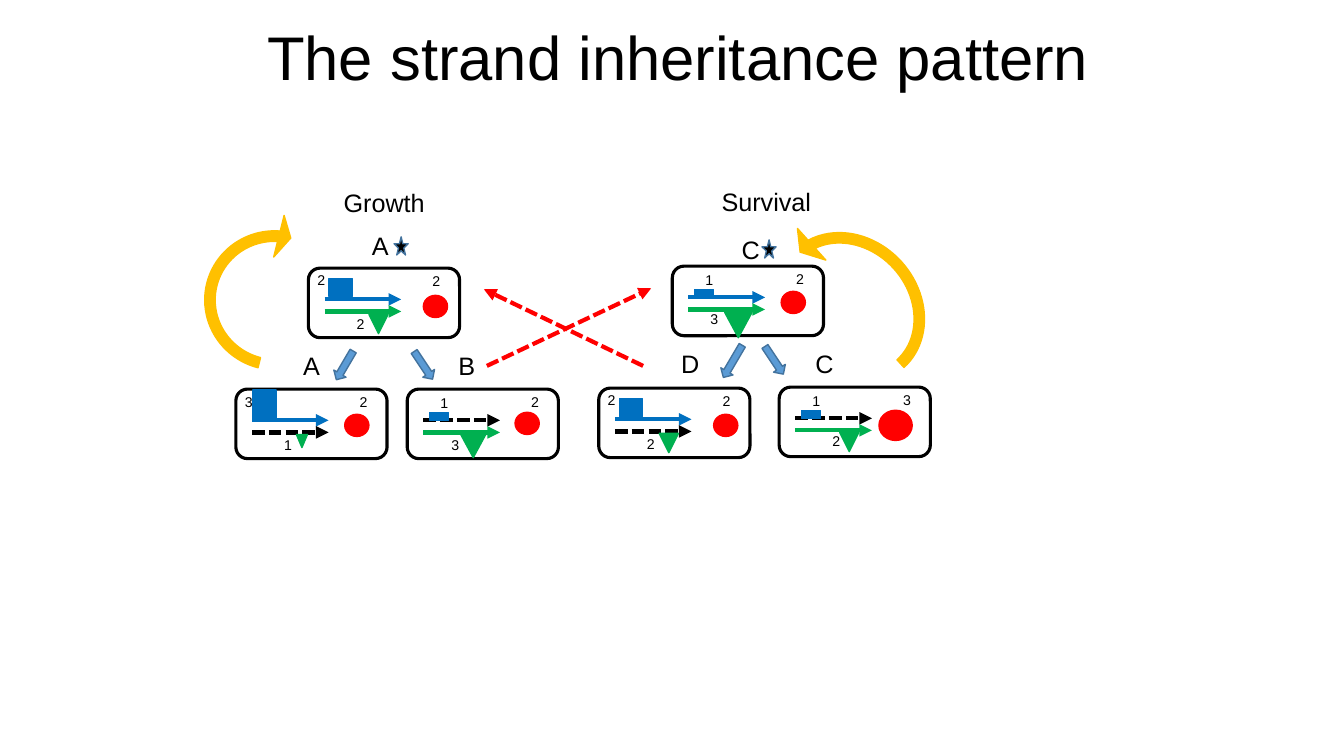
from dataclasses import dataclass

from lxml import etree
from pptx import Presentation, util as u
from pptx.dml import color
from pptx.enum import dml, shapes, text
from pptx.oxml import ns
from pptx.shapes import autoshape, connector
from pptx.slide import Slide

GRID = u.Inches(0.1)
COLUMNS, ROWS = 133.33, 75
MSO = shapes.MSO_SHAPE


@dataclass(frozen=True)
class Theme:
    font: str = "Arial"
    title: float = 44
    label: float = 18
    count: float = 10.1
    black: str = "000000"
    blue: str = "0070C0"
    green: str = "00B050"
    red: str = "FF0000"
    gold: str = "FFC000"
    arrow: str = "5B9BD5"
    edge: str = "43739E"
    strand: float = 3
    frame: float = 2.25
    thin: float = 1


@dataclass(frozen=True)
class Cell:
    """A cell with a level from 1 to 3 for each of its three traits."""
    col: float
    row: float
    blue: int
    green: int
    red: int
    dashed: str
    green_label: tuple[float, float]
    green_row: float
    dot: tuple[float, float]


@dataclass(frozen=True)
class Label:
    words: str
    col: float
    row: float
    width: float = 3.8


@dataclass(frozen=True)
class Mark:
    kind: MSO
    col: float
    row: float
    width: float
    height: float
    fill: str
    line: str
    turn: float = 0
    flips: tuple[str, ...] = ()
    adjust: tuple[float, ...] = ()


T = Theme()

# Offset from the cell's corner and size, by level
BARS = {1: (2.2, 2.3, 1.9, 0.8), 2: (2.05, 1.05, 2.3, 1.8), 3: (1.7, 0.1, 2.3, 3)}
BAR_LABELS = {1: (2.3, 0), 2: (-0.1, -0.2), 3: (-0.1, -0.1)}
WEDGES = {1: (6, 1.1, 1.3), 2: (6, 1.9, 1.9), 3: (5.2, 2.7, 2.5)}
DOTS = {2: (2.4, 2.2), 3: (3.3, 3)}

CELLS = [
    Cell(30.6, 26.6, 2, 2, 2, "", (3.8, 4.2), 4.6, (11.4, 2.7)),
    Cell(66.7, 26.4, 1, 3, 2, "", (2.8, 3.9), 4.6, (10.8, 2.5)),
    Cell(23.4, 38.6, 3, 1, 2, "green", (3.8, 4.2), 4.5, (10.8, 2.5)),
    Cell(40.4, 38.6, 1, 3, 2, "blue", (3.4, 4.2), 4.3, (10.7, 2.3)),
    Cell(59.4, 38.5, 2, 2, 2, "green", (3.8, 4.2), 4.5, (11.4, 2.6)),
    Cell(77.3, 38.4, 1, 2, 3, "blue", (4.3, 4), 4.5, (9.9, 2.3)),
]
LABELS = [
    Label("Growth", 33.1, 18.1, 10.2), Label("Survival", 70.6, 18, 11),
    Label("A", 35.9, 22.4), Label("C", 72.6, 22.8),
    Label("A", 29.1, 34.3), Label("B", 44.5, 34.3),
    Label("D", 66.6, 34.1), Label("C", 79.9, 34.1),
]
CURVE = (0.061, 6.413, 209.442, 108, 0.125)
MARKS = [
    Mark(MSO.CIRCULAR_ARROW, 18.8, 21.2, 17, 17.2, T.gold, T.gold, 104.3, ("flipH", "flipV"), CURVE),
    Mark(MSO.CIRCULAR_ARROW, 74.8, 22.1, 19.1, 16.9, T.gold, T.gold, 47.9, ("flipH",), CURVE),
    Mark(MSO.DOWN_ARROW, 33.5, 34.6, 1.4, 3.3, T.arrow, T.edge, 30.4),
    Mark(MSO.DOWN_ARROW, 41.3, 34.6, 1.4, 3.3, T.arrow, T.edge, 326.3),
    Mark(MSO.DOWN_ARROW, 72, 34, 1.4, 3.7, T.arrow, T.edge, 30.4),
    Mark(MSO.DOWN_ARROW, 76.1, 34.1, 1.4, 3.3, T.arrow, T.edge, 326.3),
    Mark(MSO.STAR_5_POINT, 39.1, 23.5, 1.4, 1.8, T.black, T.edge),
    Mark(MSO.STAR_5_POINT, 75.6, 23.8, 1.4, 1.8, T.black, T.edge),
]
CROSSINGS = [(63.8, 36.3, 48, 28.7), (48.3, 36.3, 64.6, 28.6)]


def grid(n: float) -> u.Emu:
    return u.Emu(round(n * GRID))


def rgb(value: str) -> color.RGBColor:
    return color.RGBColor.from_string(value)


def add_run(p, words: str, size: float) -> None:
    r = p.add_run()
    r.text = words
    r.font.name = T.font
    r.font.size = u.Pt(size)
    r.font.color.rgb = rgb(T.black)


def add_label(s: Slide, label: Label, size: float, height: float) -> None:
    box = s.shapes.add_textbox(*map(grid, (label.col, label.row, label.width, height)))
    tf = box.text_frame
    tf.word_wrap = False
    tf.auto_size = text.MSO_AUTO_SIZE.SHAPE_TO_FIT_TEXT
    add_run(tf.paragraphs[0], label.words, size)


def add_count(s: Slide, cell: Cell, level: int, offset: tuple[float, float]) -> None:
    label = Label(str(level), cell.col + offset[0], cell.row + offset[1], 2.8)
    add_label(s, label, T.count, 2.7)


def add_mark(s: Slide, mark: Mark) -> autoshape.Shape:
    sp = s.shapes.add_shape(mark.kind, *map(grid, (mark.col, mark.row, mark.width, mark.height)))
    sp.shadow.inherit = False
    sp.fill.solid()
    sp.fill.fore_color.rgb = rgb(mark.fill)
    sp.line.color.rgb = rgb(mark.line)
    sp.line.width = u.Pt(T.thin)
    sp.rotation = mark.turn
    for flip in mark.flips:
        sp._element.spPr.xfrm.set(flip, "1")
    for i, value in enumerate(mark.adjust):
        sp.adjustments[i] = value
    return sp


def add_arrow(s: Slide, ends: tuple[float, ...], ink: str, dashed: bool) -> connector.Connector:
    line = s.shapes.add_connector(shapes.MSO_CONNECTOR.STRAIGHT, *map(grid, ends))
    line.line.color.rgb = rgb(ink)
    line.line.width = u.Pt(T.strand)
    if dashed:
        line.line.dash_style = dml.MSO_LINE.SQUARE_DOT
    etree.SubElement(line.line._get_or_add_ln(), ns.qn("a:tailEnd"), type="triangle")
    etree.SubElement(line._element.spPr, ns.qn("a:effectLst"))
    return line


def add_cell(s: Slide, cell: Cell) -> None:
    x, y = cell.col, cell.row
    for name, ink, row in (("blue", T.blue, y + 3.1), ("green", T.green, y + 4.3)):
        dashed = cell.dashed == name
        add_arrow(s, (x + 1.6, row, x + 9.2, row), T.black if dashed else ink, dashed)

    frame = add_mark(s, Mark(MSO.ROUNDED_RECTANGLE, x, y, 15, 6.9, T.black, T.black))
    frame.fill.background()
    frame.line.width = u.Pt(T.frame)

    dx, dy, width, height = BARS[cell.blue]
    add_mark(s, Mark(MSO.RECTANGLE, x + dx, y + dy, width, height, T.blue, T.blue))
    dx, width, height = WEDGES[cell.green]
    add_mark(s, Mark(MSO.ISOSCELES_TRIANGLE, x + dx, y + cell.green_row, width, height,
                     T.green, T.green, 180))
    dx, dy = cell.dot
    add_mark(s, Mark(MSO.OVAL, x + dx, y + dy, *DOTS[cell.red], T.red, T.red))

    add_count(s, cell, cell.blue, BAR_LABELS[cell.blue])
    add_count(s, cell, cell.green, cell.green_label)
    add_count(s, cell, cell.red, (11.3, -0.1))


def add_title(s: Slide, words: str) -> None:
    title = s.shapes.title
    title.left, title.top, title.width, title.height = map(grid, (9.8, 0.1, 115, 11.9))
    tf = title.text_frame
    tf.vertical_anchor = text.MSO_ANCHOR.MIDDLE
    p = tf.paragraphs[0]
    p.alignment = text.PP_ALIGN.CENTER
    p.line_spacing = 0.9
    add_run(p, words, T.title)


def main() -> None:
    prs = Presentation()
    prs.slide_width, prs.slide_height = grid(COLUMNS), grid(ROWS)
    s = prs.slides.add_slide(prs.slide_layouts[5])
    add_title(s, "The strand inheritance pattern")
    for cell in CELLS:
        add_cell(s, cell)
    for mark in MARKS:
        add_mark(s, mark)
    for label in LABELS:
        add_label(s, label, T.label, 4)
    for ends in CROSSINGS:
        add_arrow(s, ends, T.red, True)
    prs.save("out.pptx")


if __name__ == "__main__":
    main()
